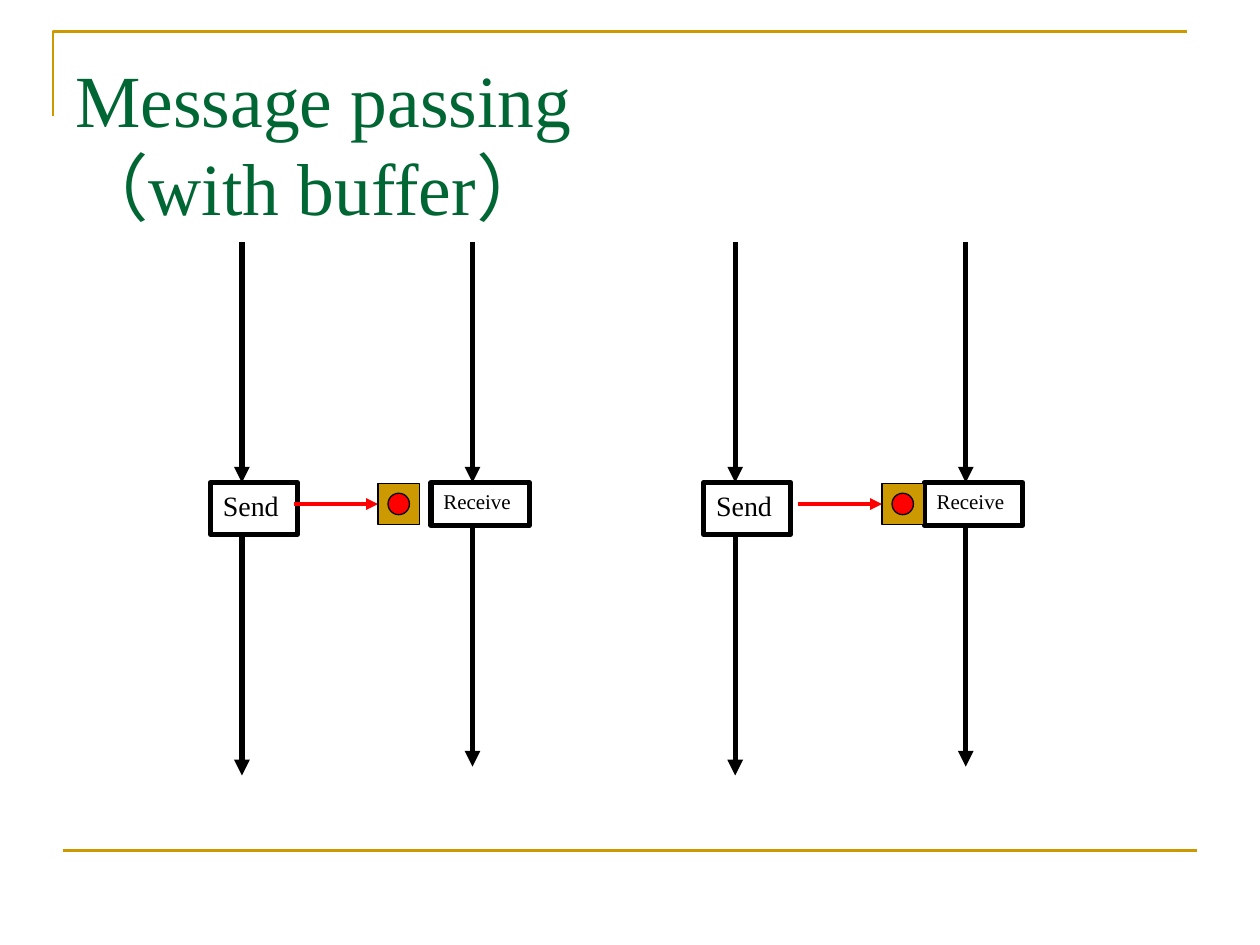
"""Build a slide showing message passing with a buffer."""
from lxml.etree import SubElement
from pptx import Presentation
from pptx.dml.color import RGBColor
from pptx.enum.shapes import MSO_CONNECTOR, MSO_SHAPE
from pptx.enum.text import MSO_ANCHOR, MSO_AUTO_SIZE, PP_ALIGN
from pptx.oxml.ns import qn
from pptx.util import Inches, Pt

FONT = "Times New Roman"
GOLD = RGBColor(0xCC, 0x99, 0x00)
GREEN = RGBColor(0x00, 0x66, 0x33)
BLACK = RGBColor(0x00, 0x00, 0x00)
RED = RGBColor(0xFF, 0x00, 0x00)

TITLE = "Message passing\v（with buffer）"
PROCESSES = [
    {"label": "Send", "x": 1.92, "box": (1.67, 0.69, 0.41), "size": 16},
    {"label": "Receive", "x": 3.75, "box": (3.42, 0.78, 0.34), "size": 12},
]
SCENARIOS = [{"shift": 0, "message_x": 2.33}, {"shift": 3.915, "message_x": 6.33}]
START_Y, BOX_Y, ARROW_LENGTH = 1.92, 3.83, 1.915
MESSAGE_Y, MESSAGE_LENGTH = 4, 0.67
BUFFER_SIZE, TOKEN_SIZE = 0.33, 0.17


def set_font(p, size, color):
    p.font.name = FONT
    p.font.size = Pt(size)
    p.font.color.rgb = color


def add_line(shapes, x1, y1, x2, y2, color, width, arrow=True):
    line = shapes.add_connector(
        MSO_CONNECTOR.STRAIGHT, Inches(x1), Inches(y1), Inches(x2), Inches(y2))
    line.line.color.rgb = color
    line.line.width = Pt(width)
    if arrow:
        SubElement(line.line._get_or_add_ln(), qn("a:tailEnd"), type="triangle")
    SubElement(line._element.spPr, qn("a:effectLst"))
    return line


def style_shape(sp, fill, color, width):
    sp.shadow.inherit = False
    if fill is None:
        sp.fill.background()
    else:
        sp.fill.solid()
        sp.fill.fore_color.rgb = fill
    sp.line.color.rgb = color
    sp.line.width = Pt(width)


def add_shape(shapes, kind, x, y, w, h, fill, width):
    sp = shapes.add_shape(kind, Inches(x), Inches(y), Inches(w), Inches(h))
    style_shape(sp, fill, BLACK, width)
    return sp


def add_frame(shapes):
    builder = shapes.build_freeform(Inches(0.42), Inches(0.92))
    builder.add_line_segments(
        [(Inches(0.42), Inches(0.25)), (Inches(9.42), Inches(0.25))], close=False)
    style_shape(builder.convert_to_shape(), None, GOLD, 1.5)
    add_line(shapes, 0.5, 6.75, 9.5, 6.75, GOLD, 1.5, arrow=False)


def add_title(shapes):
    tf = shapes.add_textbox(Inches(0.5), Inches(0.3), Inches(9), Inches(1.25)).text_frame
    tf.word_wrap = True
    tf.vertical_anchor = MSO_ANCHOR.TOP
    tf.margin_top = Inches(0.13)
    p = tf.paragraphs[0]
    p.text = TITLE
    set_font(p, 42, GREEN)


def add_process(shapes, process, shift):
    x = process["x"] + shift
    left, w, h = process["box"]
    bottom = BOX_Y + h
    add_line(shapes, x, bottom, x, bottom + ARROW_LENGTH, BLACK, 3)
    add_line(shapes, x, START_Y, x, BOX_Y, BLACK, 3)
    sp = add_shape(shapes, MSO_SHAPE.RECTANGLE, left + shift, BOX_Y, w, h, None, 3)
    tf = sp.text_frame
    tf.word_wrap = False
    tf.auto_size = MSO_AUTO_SIZE.SHAPE_TO_FIT_TEXT
    tf.vertical_anchor = MSO_ANCHOR.TOP
    p = tf.paragraphs[0]
    p.text = process["label"]
    p.alignment = PP_ALIGN.LEFT
    set_font(p, process["size"], BLACK)


def add_message(shapes, x):
    left = x + MESSAGE_LENGTH
    arrow = add_line(shapes, x, MESSAGE_Y, left, MESSAGE_Y, RED, 2.25)
    buffer = add_shape(shapes, MSO_SHAPE.RECTANGLE, left, MESSAGE_Y - BUFFER_SIZE / 2,
                       BUFFER_SIZE, BUFFER_SIZE, GOLD, 0.75)
    arrow.end_connect(buffer, 1)
    inset = (BUFFER_SIZE - TOKEN_SIZE) / 2
    add_shape(shapes, MSO_SHAPE.OVAL, left + inset, MESSAGE_Y - TOKEN_SIZE / 2,
              TOKEN_SIZE, TOKEN_SIZE, RED, 0.75)


def main():
    prs = Presentation()
    prs.slide_width, prs.slide_height = Inches(10), Inches(7.5)
    s = prs.slides.add_slide(prs.slide_layouts[6])
    add_frame(s.shapes)
    add_title(s.shapes)
    for scenario in SCENARIOS:
        for process in PROCESSES:
            add_process(s.shapes, process, scenario["shift"])
        add_message(s.shapes, scenario["message_x"])
    prs.save("out.pptx")


if __name__ == "__main__":
    main()
